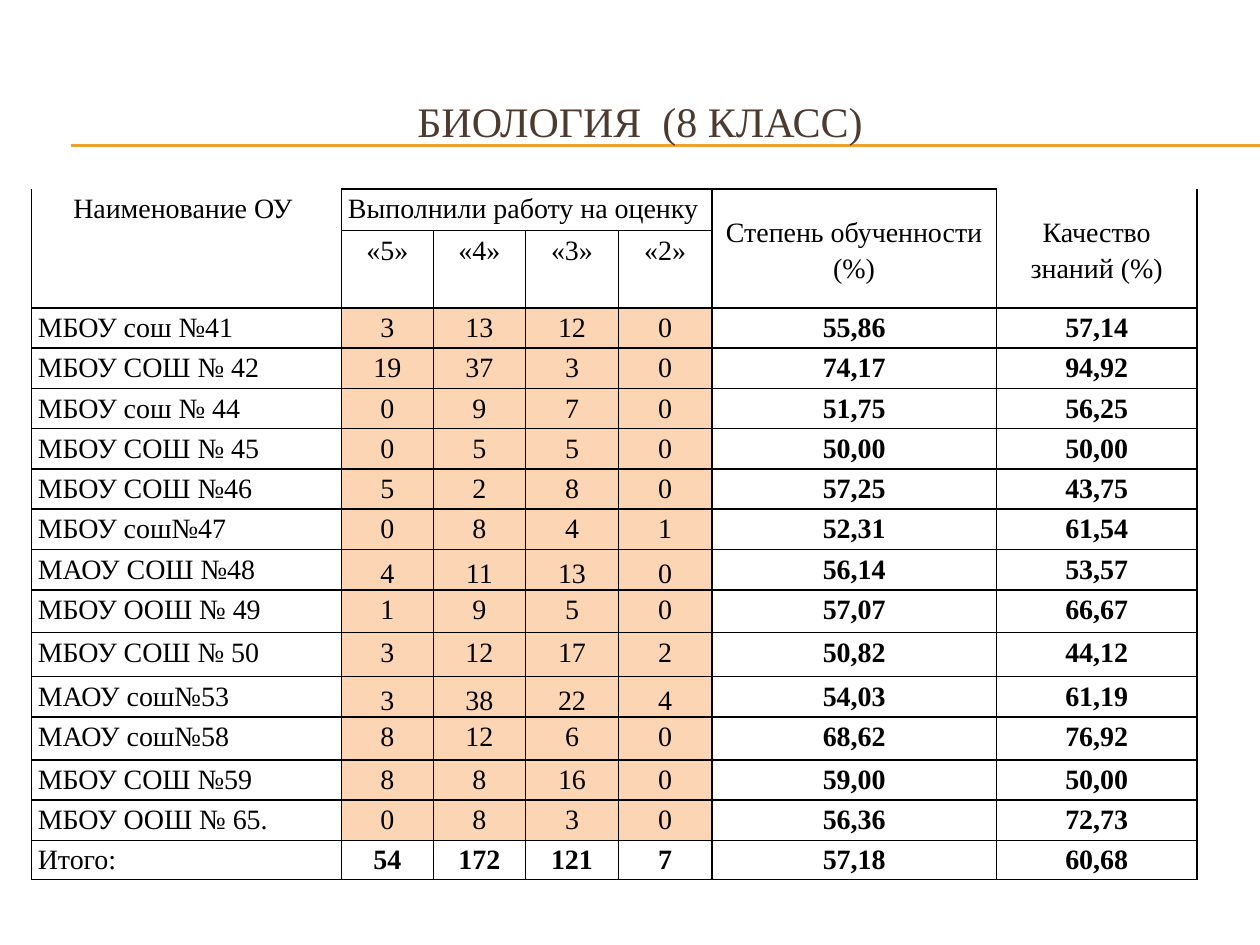
from typing import NamedTuple

from lxml import etree
from pptx import Presentation
from pptx import util as u
from pptx.dml.color import RGBColor
from pptx.enum import shapes, text
from pptx.oxml import ns

WIDTH, HEIGHT = u.Inches(10), u.Inches(7.5)
FONT, BLACK, WHITE, PEACH, GOLD, BROWN = (
    "Times New Roman", "000000", "FFFFFF", "FCD5B4", "F0A22E", "4E3B30")
CENTER, LEFT = text.PP_ALIGN.CENTER, text.PP_ALIGN.LEFT
TOP, MIDDLE, BOTTOM = (text.MSO_ANCHOR.TOP, text.MSO_ANCHOR.MIDDLE,
                       text.MSO_ANCHOR.BOTTOM)


class School(NamedTuple):
    name: str
    marks: tuple
    attainment: str
    quality: str
    height: float = 0.32
    marks_anchor: text.MSO_ANCHOR = TOP
    fill: str = PEACH


class Header(NamedTuple):
    row: int
    col: int
    rows: int
    cols: int
    label: str
    anchor: text.MSO_ANCHOR = TOP


HEADERS = [
    Header(0, 0, 2, 1, "Наименование ОУ "),
    Header(0, 1, 1, 4, "Выполнили работу на оценку "),
    Header(0, 5, 2, 1, "Степень обученности (%)", MIDDLE),
    Header(0, 6, 2, 1, "Качество знаний (%)", MIDDLE),
    *(Header(1, i, 1, 1, f"«{6 - i}»") for i in range(1, 5)),
]
SCHOOLS = [
    School("МБОУ сош №41", (3, 13, 12, 0), "55,86", "57,14"),
    School("МБОУ СОШ № 42", (19, 37, 3, 0), "74,17", "94,92"),
    School("МБОУ сош № 44", (0, 9, 7, 0), "51,75", "56,25"),
    School("МБОУ СОШ № 45", (0, 5, 5, 0), "50,00", "50,00"),
    School("МБОУ СОШ №46", (5, 2, 8, 0), "57,25", "43,75"),
    School("МБОУ сош№47", (0, 8, 4, 1), "52,31", "61,54"),
    School("МАОУ СОШ №48", (4, 11, 13, 0), "56,14", "53,57", marks_anchor=BOTTOM),
    School("МБОУ ООШ № 49", (1, 9, 5, 0), "57,07", "66,67", 0.34),
    School("МБОУ СОШ № 50", (3, 12, 17, 2), "50,82", "44,12", 0.35),
    School("МАОУ сош№53", (3, 38, 22, 4), "54,03", "61,19", marks_anchor=BOTTOM),
    School("МАОУ сош№58", (8, 12, 6, 0), "68,62", "76,92", 0.34),
    School("МБОУ СОШ №59", (8, 8, 16, 0), "59,00", "50,00"),
    School("МБОУ ООШ № 65.", (0, 8, 3, 0), "56,36", "72,73"),
    School("Итого:", (54, 172, 121, 7), "57,18", "60,68", 0.31, fill=WHITE),
]
COLUMNS = [2.46, 0.73, 0.73, 0.74, 0.74, 2.26, 1.59]
ROWS = [0.33, 0.57] + [school.height for school in SCHOOLS]


def color(value: str) -> RGBColor:
    return RGBColor.from_string(value)


def set_all(target, **formats) -> None:
    for name, value in formats.items():
        setattr(target, name, value)


def write(tf, content: str, size: float, ink: str, align=CENTER,
          bold=False, spacing=1.0) -> None:
    p = tf.paragraphs[0]
    set_all(p, alignment=align, line_spacing=spacing)
    r = p.add_run()
    r.text = content
    set_all(r.font, name=FONT, size=u.Pt(size), bold=bold)
    r.font.color.rgb = color(ink)


def draw_rule(s, y: float) -> None:
    line = s.shapes.add_connector(shapes.MSO_CONNECTOR.STRAIGHT,
                                  int(WIDTH * 0.056), u.Inches(y), WIDTH, u.Inches(y))
    line.line.color.rgb = color(GOLD)
    line.line.width = u.Pt(0.75)
    etree.SubElement(line._element.spPr, ns.qn("a:effectLst"))


def set_borders(cell, hidden: str = "") -> None:
    """Draw black 1 pt borders on a cell, except on the hidden sides (L, R, T, B)."""
    tc_pr = cell._tc.get_or_add_tcPr()
    for i, side in enumerate("LRTB"):
        ln = etree.Element(ns.qn(f"a:ln{side}"), w=str(u.Pt(1)))
        if side in hidden:
            etree.SubElement(ln, ns.qn("a:noFill"))
        else:
            fill = etree.SubElement(ln, ns.qn("a:solidFill"))
            etree.SubElement(fill, ns.qn("a:srgbClr"), val=BLACK)
        tc_pr.insert(i, ln)


def fill_cell(cell, content: str, fill=WHITE, align=CENTER, bold=False,
              anchor=TOP) -> None:
    set_all(cell, margin_left=u.Inches(0.05), margin_right=u.Inches(0.05),
            margin_top=0, margin_bottom=0, vertical_anchor=anchor)
    cell.fill.solid()
    cell.fill.fore_color.rgb = color(fill)
    write(cell.text_frame, content, 16, BLACK, align, bold, 1.15)


def draw_results(s) -> None:
    table = s.shapes.add_table(len(ROWS), len(COLUMNS), u.Inches(0.25), u.Inches(1.5),
                               u.Inches(sum(COLUMNS)), u.Inches(sum(ROWS))).table
    set_all(table, first_row=False, horz_banding=False)
    for column, width in zip(table.columns, COLUMNS):
        column.width = u.Inches(width)
    for row, height in zip(table.rows, ROWS):
        row.height = u.Inches(height)

    for h in HEADERS:
        cell = table.cell(h.row, h.col)
        if h.rows * h.cols > 1:
            cell.merge(table.cell(h.row + h.rows - 1, h.col + h.cols - 1))
        fill_cell(cell, h.label, anchor=h.anchor)
    for i, school in enumerate(SCHOOLS, start=2):
        fill_cell(table.cell(i, 0), school.name, align=LEFT)
        for j, mark in enumerate(school.marks, start=1):
            fill_cell(table.cell(i, j), str(mark), school.fill,
                      bold=school.fill == WHITE, anchor=school.marks_anchor)
        for j, share in enumerate((school.attainment, school.quality), start=5):
            fill_cell(table.cell(i, j), share, bold=True)

    open_top = {(0, 0), (0, len(COLUMNS) - 1)}
    for i in range(len(ROWS)):
        for j in range(len(COLUMNS)):
            set_borders(table.cell(i, j), "T" if (i, j) in open_top else "")


def main() -> None:
    prs = Presentation()
    set_all(prs, slide_width=WIDTH, slide_height=HEIGHT)
    s = prs.slides.add_slide(prs.slide_layouts[6])
    for y in (1.15, 1.16):
        draw_rule(s, y)
    title = s.shapes.add_textbox(u.Inches(0.33), u.Inches(0.5),
                                 u.Inches(9.5), u.Inches(0.92))
    set_all(title.text_frame, word_wrap=True, vertical_anchor=MIDDLE)
    write(title.text_frame, "БИОЛОГИЯ  (8 КЛАСС)", 24, BROWN)
    draw_results(s)
    prs.save("out.pptx")


if __name__ == "__main__":
    main()
